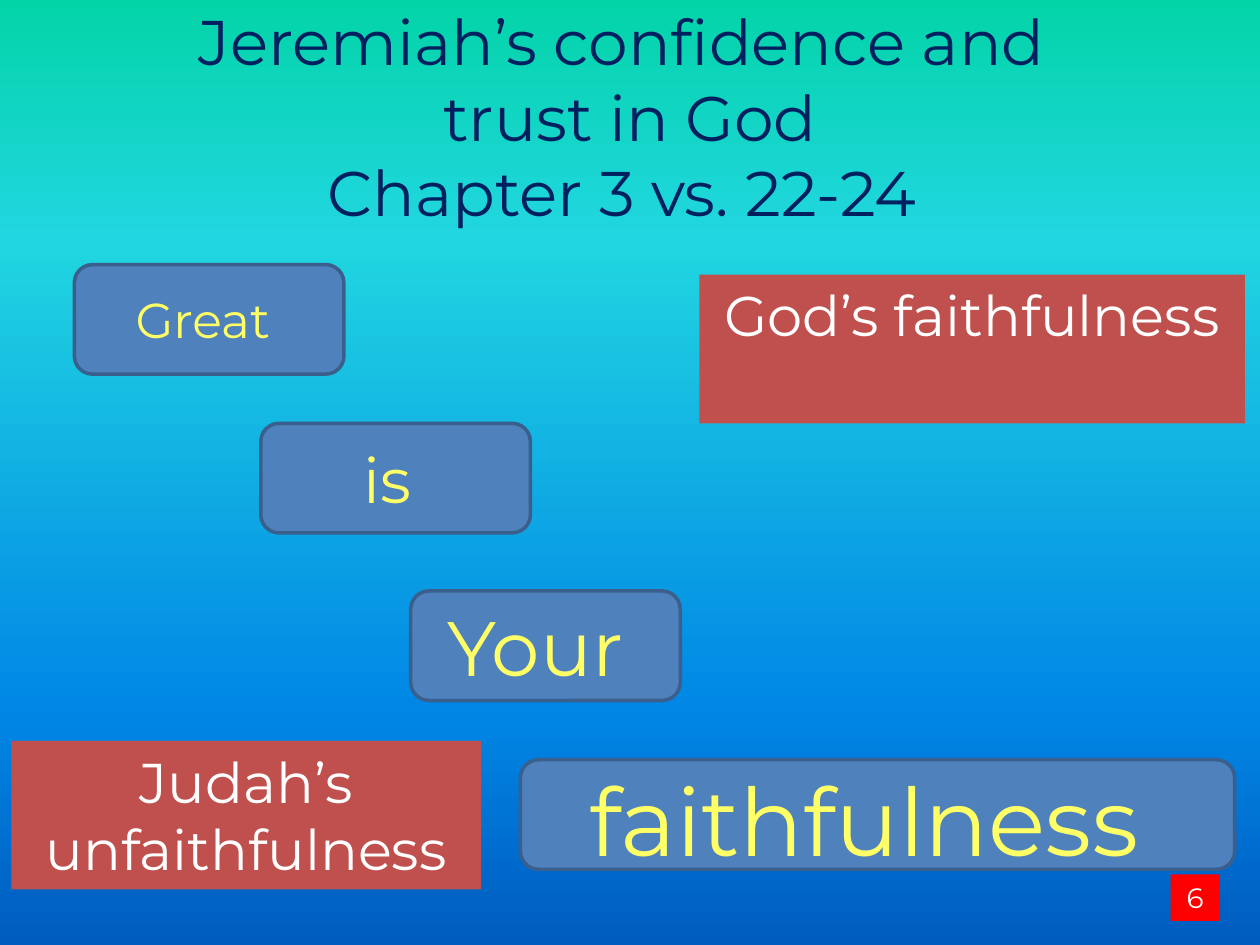
"""Build the slide on Jeremiah's confidence and trust in God."""
from lxml.etree import SubElement
from pptx import Presentation
from pptx.dml.color import RGBColor
from pptx.enum.shapes import MSO_SHAPE
from pptx.enum.text import MSO_ANCHOR, PP_ALIGN
from pptx.oxml.ns import qn
from pptx.util import Inches, Pt

FONT = "Montserrat"
NAVY = RGBColor(0x00, 0x20, 0x60)
BLUE = RGBColor(0x4F, 0x81, 0xBD)
DARK_BLUE = RGBColor(0x3A, 0x5F, 0x8C)
YELLOW = RGBColor(0xFF, 0xFF, 0x66)
BRICK = RGBColor(0xC0, 0x50, 0x4D)
RED = RGBColor(0xFF, 0x00, 0x00)
WHITE = RGBColor(0xFF, 0xFF, 0xFF)
BACKGROUND_STOPS = [
    (0, RGBColor(0x03, 0xD4, 0xA8)),
    (25, RGBColor(0x21, 0xD6, 0xE0)),
    (75, RGBColor(0x00, 0x87, 0xE6)),
    (100, RGBColor(0x00, 0x5C, 0xBF)),
]

TITLE = ["Jeremiah’s confidence and ", "trust in God", "Chapter 3 vs. 22-24 "]
STEP_HEIGHT = 0.87
STEPS = [
    (0.59, 2.1, 2.14, [("Great ", 28)]),
    (2.07, 3.36, 2.14, [("is ", 36)]),
    (3.26, 4.69, 2.14, [("Your ", 44)]),
    (4.13, 6.03, 5.67, [("faithfulness", 54), (" ", 60)]),
]
LABELS = [
    ((5.55, 2.18, 4.33, 1.18), BRICK, "God’s faithfulness", 32),
    ((0.09, 5.88, 3.73, 1.18), BRICK, "Judah’s unfaithfulness", 32),
    ((9.29, 6.94, 0.39, 0.37), RED, "6", 16),
]


def paint_background(slide):
    fill = slide.background.fill
    fill.gradient()
    fill.gradient_angle = 270
    stop_list = next(slide.element.iter(qn("a:gsLst")))
    for stop in list(stop_list):
        stop_list.remove(stop)
    for percent, color in BACKGROUND_STOPS:
        stop = SubElement(stop_list, qn("a:gs"), pos=str(percent * 1000))
        SubElement(stop, qn("a:srgbClr"), val=str(color))


def write_text(shape, paragraphs, color, anchor=MSO_ANCHOR.TOP):
    frame = shape.text_frame
    frame.word_wrap = True
    frame.vertical_anchor = anchor
    for index, spans in enumerate(paragraphs):
        para = frame.add_paragraph() if index else frame.paragraphs[0]
        para.alignment = PP_ALIGN.CENTER
        for text, size in spans:
            span = para.add_run()
            span.text = text
            span.font.name = FONT
            span.font.size = Pt(size)
            span.font.color.rgb = color


def add_box(slide, kind, place, fill, line=None):
    box = slide.shapes.add_shape(kind, *map(Inches, place))
    box.shadow.inherit = False
    box.fill.solid()
    box.fill.fore_color.rgb = fill
    if line is None:
        box.line.fill.background()
    else:
        box.line.color.rgb = line
        box.line.width = Pt(2)
    return box


def main():
    deck = Presentation()
    deck.slide_width, deck.slide_height = Inches(10), Inches(7.5)
    slide = deck.slides.add_slide(deck.slide_layouts[6])
    paint_background(slide)

    title = slide.shapes.add_textbox(*map(Inches, (0, -0.03, 10, 1.92)))
    write_text(title, [[(text, 36)] for text in TITLE], NAVY)

    for left, top, width, spans in STEPS:
        place = (left, top, width, STEP_HEIGHT)
        box = add_box(slide, MSO_SHAPE.ROUNDED_RECTANGLE, place, BLUE, DARK_BLUE)
        write_text(box, [spans], YELLOW, MSO_ANCHOR.MIDDLE)

    for place, fill, text, size in LABELS:
        box = add_box(slide, MSO_SHAPE.RECTANGLE, place, fill)
        write_text(box, [[(text, size)]], WHITE)

    deck.save("out.pptx")


if __name__ == "__main__":
    main()
